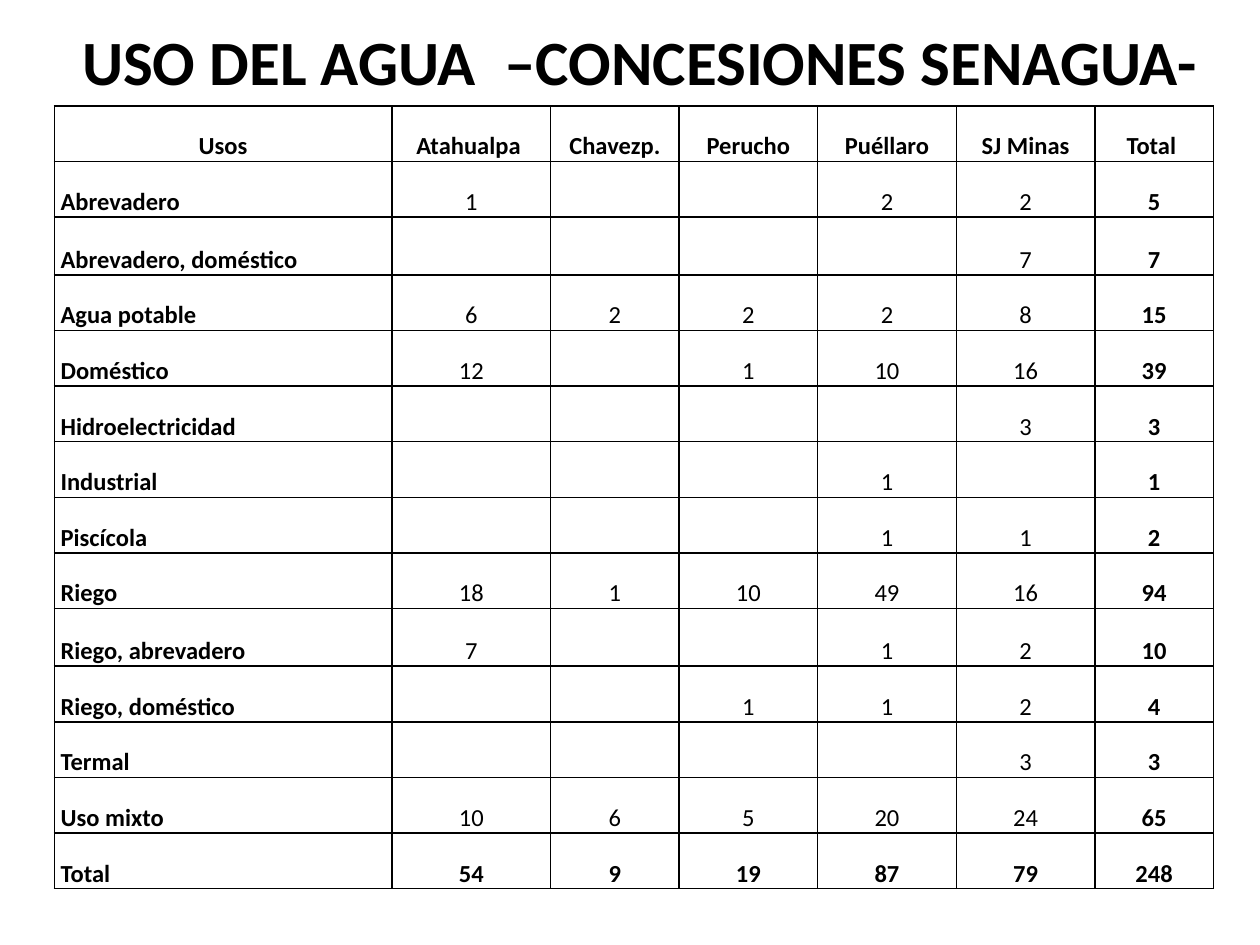
from dataclasses import dataclass

from lxml import etree
from pptx import Presentation
from pptx.dml.color import RGBColor
from pptx.enum.text import MSO_ANCHOR, MSO_AUTO_SIZE, PP_ALIGN
from pptx.oxml.ns import qn
from pptx.util import Pt

LEFT, CENTER = PP_ALIGN.LEFT, PP_ALIGN.CENTER
BOTTOM = MSO_ANCHOR.BOTTOM
GROW = MSO_AUTO_SIZE.SHAPE_TO_FIT_TEXT
BLACK = RGBColor(0, 0, 0)
FONT = "Calibri"
BORDER = Pt(1)
BORDER_TAGS = ("a:lnL", "a:lnR", "a:lnT", "a:lnB")
COLUMN_WIDTHS = (193, 90.7, 73.4, 79.2, 79.2, 79.2, 67.7)
ROW_HEIGHT, TALL_ROW_HEIGHT = 31.8, 33
TABLE_LEFT, TABLE_TOP = 31, 60.5


@dataclass(frozen=True)
class UseRow:
    label: str
    values: tuple[str, ...]
    bold: bool = False
    label_align: PP_ALIGN = LEFT
    height: float = ROW_HEIGHT


USE_ROWS = (
    UseRow("Usos", ("Atahualpa ", "Chavezp.", "Perucho", "Puéllaro", "SJ Minas", "Total "),
           bold=True, label_align=CENTER),
    UseRow("Abrevadero", ("1", "", "", "2", "2", "5")),
    UseRow("Abrevadero, doméstico", ("", "", "", "", "7", "7"), height=TALL_ROW_HEIGHT),
    UseRow("Agua potable", ("6", "2", "2", "2", "8", "15")),
    UseRow("Doméstico", ("12", "", "1", "10", "16", "39")),
    UseRow("Hidroelectricidad", ("", "", "", "", "3", "3")),
    UseRow("Industrial", ("", "", "", "1", "", "1")),
    UseRow("Piscícola", ("", "", "", "1", "1", "2")),
    UseRow("Riego", ("18", "1", "10", "49", "16", "94")),
    UseRow("Riego, abrevadero", ("7", "", "", "1", "2", "10"), height=TALL_ROW_HEIGHT),
    UseRow("Riego, doméstico", ("", "", "1", "1", "2", "4")),
    UseRow("Termal", ("", "", "", "", "3", "3")),
    UseRow("Uso mixto", ("10", "6", "5", "20", "24", "65")),
    UseRow("Total", ("54", "9", "19", "87", "79", "248"), bold=True),
)


def write_text(frame, text: str, size: float, bold: bool, align: PP_ALIGN) -> None:
    para = frame.paragraphs[0]
    para.alignment = align
    para.font.size = Pt(size)
    if text:
        span = para.add_run()
        span.text = text
        span.font.name = FONT
        span.font.size = Pt(size)
        span.font.bold = bold
        span.font.color.rgb = BLACK


def add_borders(cell) -> None:
    properties = cell._tc.get_or_add_tcPr()
    for position, tag in enumerate(BORDER_TAGS):
        line = etree.Element(qn(tag), w=str(BORDER))
        fill = etree.SubElement(line, qn("a:solidFill"))
        etree.SubElement(fill, qn("a:srgbClr"), val=str(BLACK))
        properties.insert(position, line)


def fill_cell(cell, text: str, bold: bool, align: PP_ALIGN) -> None:
    cell.fill.background()
    cell.vertical_anchor = BOTTOM
    cell.margin_left = cell.margin_right = Pt(3.6)
    cell.margin_top = cell.margin_bottom = Pt(0)
    write_text(cell.text_frame, text, 14, bold, align)
    add_borders(cell)


def add_use_table(page, use_rows: tuple[UseRow, ...]) -> None:
    width = sum(COLUMN_WIDTHS)
    height = sum(use.height for use in use_rows)
    table = page.shapes.add_table(
        len(use_rows), len(COLUMN_WIDTHS),
        Pt(TABLE_LEFT), Pt(TABLE_TOP), Pt(width), Pt(height),
    ).table
    table.first_row = False
    table.horz_banding = False
    for column, column_width in zip(table.columns, COLUMN_WIDTHS):
        column.width = Pt(column_width)
    last = len(COLUMN_WIDTHS) - 1
    for row, use in zip(table.rows, use_rows):
        row.height = Pt(use.height)
        for index, text in enumerate((use.label, *use.values)):
            bold = use.bold or index in (0, last)
            align = use.label_align if index == 0 else CENTER
            fill_cell(row.cells[index], text, bold, align)


def add_title(page, text: str) -> None:
    box = page.shapes.add_textbox(Pt(31), Pt(9.4), Pt(669), Pt(51))
    box.text_frame.word_wrap = True
    box.text_frame.auto_size = GROW
    write_text(box.text_frame, text, 36, True, CENTER)


def main() -> None:
    deck = Presentation()
    deck.slide_width, deck.slide_height = Pt(720), Pt(540)
    page = deck.slides.add_slide(deck.slide_layouts[6])
    add_use_table(page, USE_ROWS)
    add_title(page, "USO DEL AGUA  –CONCESIONES SENAGUA-")
    deck.save("out.pptx")


if __name__ == "__main__":
    main()
